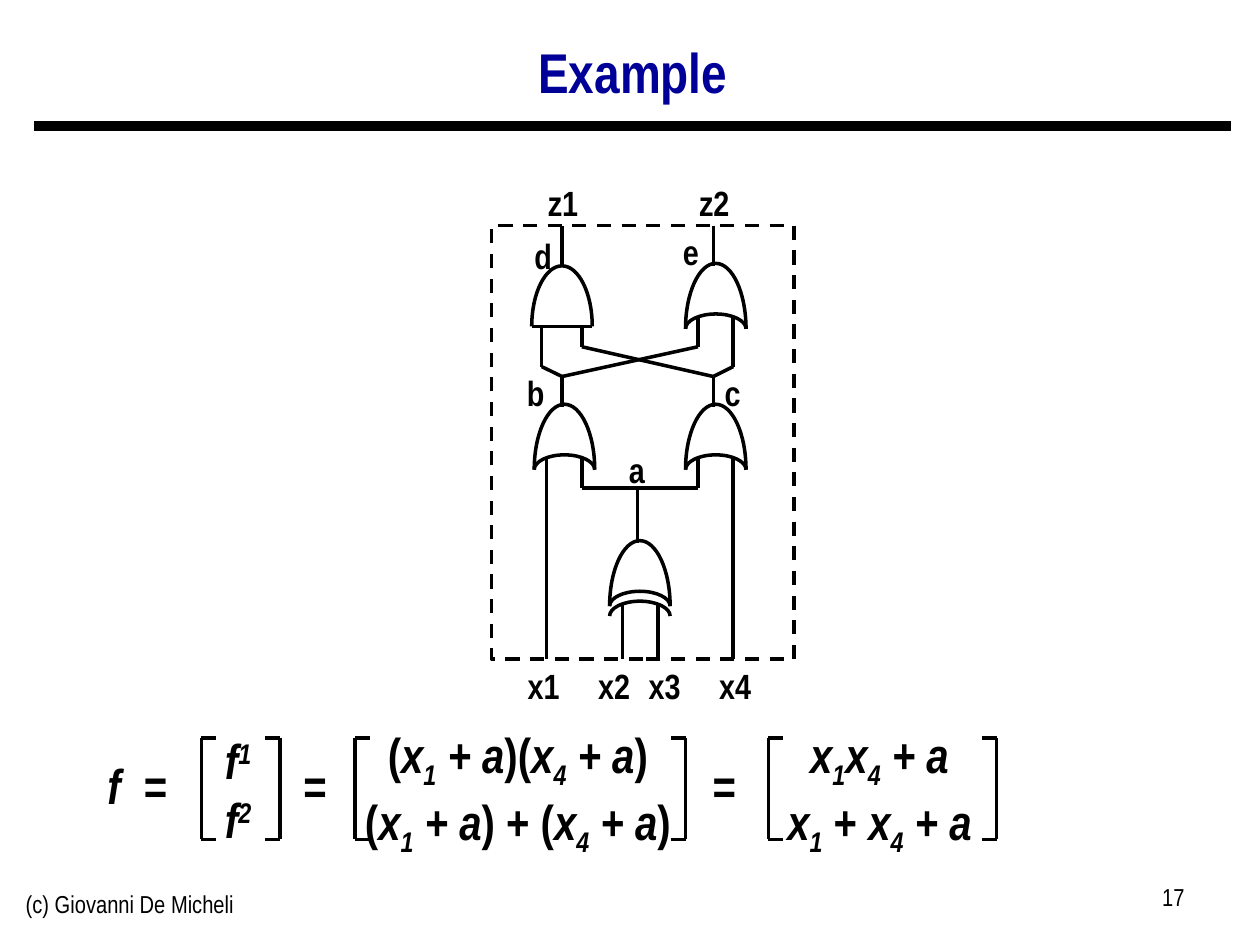
import pptx
import pptx.dml.color
import pptx.enum.dml
import pptx.enum.shapes
import pptx.enum.text
import pptx.oxml.ns
import pptx.util
from lxml import etree

Cm = pptx.util.Cm
Pt = pptx.util.Pt
qn = pptx.oxml.ns.qn
ALIGN = pptx.enum.text.PP_ALIGN
BLACK = pptx.dml.color.RGBColor(0x00, 0x00, 0x00)
NAVY = pptx.dml.color.RGBColor(0x00, 0x00, 0x99)
ROUND = 0.55  # Bézier handle length for a quarter ellipse


class Drawing:
    font = "Arial Narrow"
    color = BLACK
    line_width = 2

    def __init__(self, slide):
        self.s = slide

    def stroke(self, sp, width=None):
        sp.line.color.rgb = self.color
        sp.line.width = Pt(width or self.line_width)

    def outline(self, sp):
        sp.shadow.inherit = False
        sp.fill.background()
        self.stroke(sp)

    def line(self, x1, y1, x2, y2, width=None):
        sp = self.s.shapes.add_connector(
            pptx.enum.shapes.MSO_CONNECTOR.STRAIGHT, Cm(x1), Cm(y1), Cm(x2), Cm(y2))
        self.stroke(sp, width)
        etree.SubElement(sp._element.spPr, qn("a:effectLst"))

    def dashed_box(self, x, y, w, h):
        sp = self.s.shapes.add_shape(
            pptx.enum.shapes.MSO_SHAPE.RECTANGLE, Cm(x), Cm(y), Cm(w), Cm(h))
        self.outline(sp)
        sp.line.dash_style = pptx.enum.dml.MSO_LINE.DASH

    def dome(self, cx, top, h, w=1.22):
        """Upper half of an ellipse, left open at the bottom."""
        fb = self.s.shapes.build_freeform(Cm(cx - w / 2), Cm(top + h))
        fb.add_line_segments([(Cm(cx), Cm(top)), (Cm(cx + w / 2), Cm(top + h))],
                             close=False)
        sp = fb.convert_to_shape()
        self.outline(sp)
        shoulder = h * (1 - ROUND)
        handles = [[(0, shoulder), (w / 2 * (1 - ROUND), 0)],
                   [(w / 2 * (1 + ROUND), 0), (w, shoulder)]]
        for segment, pair in zip(list(sp._element.iter(qn("a:lnTo"))), handles):
            curve = etree.Element(qn("a:cubicBezTo"))
            for x, y in pair:
                etree.SubElement(curve, qn("a:pt"), x=str(Cm(x)), y=str(Cm(y)))
            curve.append(segment[0])
            segment.getparent().replace(segment, curve)

    def and_gate(self, cx, top):
        self.dome(cx, top, 1.22)
        self.line(cx - 0.61, top + 1.22, cx + 0.61, top + 1.22)

    def or_gate(self, cx, top, exclusive=False):
        self.dome(cx, top, 1.32)
        self.dome(cx, top + 1.02, 0.3)
        if exclusive:
            self.dome(cx, top + 1.22, 0.3)

    def brackets(self, left, right, top=14.88, bottom=16.92, tick=0.3):
        for x, end in ((left, left + tick), (right, right - tick)):
            self.line(x, top, x, bottom)
            self.line(x, top, end, top)
            self.line(x, bottom, end, bottom)

    def text(self, text, x, y, w, h, size=20, bold=True, italic=False, color=None,
             align=ALIGN.CENTER, wrap=False, middle=False, spacing=None):
        """Text is a string, or paragraphs of (run, style): i italic, _ sub, ^ super."""
        sp = self.s.shapes.add_textbox(Cm(x), Cm(y), Cm(w), Cm(h))
        tf = sp.text_frame
        tf.word_wrap = wrap
        if not wrap:
            tf.auto_size = pptx.enum.text.MSO_AUTO_SIZE.SHAPE_TO_FIT_TEXT
        if middle:
            tf.vertical_anchor = pptx.enum.text.MSO_ANCHOR.MIDDLE
        paragraphs = [[(text, "i" * italic)]] if isinstance(text, str) else text
        for i, runs in enumerate(paragraphs):
            p = tf.add_paragraph() if i else tf.paragraphs[0]
            p.alignment = align
            if spacing:
                p.line_spacing = spacing
            for content, style in runs:
                r = p.add_run()
                r.text = content
                r.font.name = self.font
                r.font.size = Pt(size)
                r.font.bold = bold
                r.font.italic = style != ""
                r.font.color.rgb = color or self.color
                if style in ("_", "^"):
                    r._r.get_or_add_rPr().set(
                        "baseline", "-25000" if style == "_" else "30000")


def draw_circuit(d):
    d.and_gate(11.33, 5.36)
    d.or_gate(14.43, 5.31)
    d.or_gate(12.9, 10.9, exclusive=True)
    d.or_gate(11.38, 8.15)
    d.or_gate(14.43, 8.15)
    d.dashed_box(9.91, 4.55, 6.1, 8.74)

    vertical_wires = [
        (11.02, 9.22, 13.28), (14.78, 9.22, 13.28),
        (12.55, 12.17, 13.28), (13.26, 12.17, 13.28),
        (11.33, 7.59, 8.2), (14.38, 7.59, 8.2),
        (10.92, 6.58, 7.39), (14.78, 6.38, 7.39),
        (11.73, 6.58, 6.99), (14.07, 6.38, 6.99),
        (11.73, 9.22, 9.84), (14.07, 9.22, 9.84),
        (12.85, 9.84, 10.95),
        (11.33, 4.55, 5.36), (14.38, 4.55, 5.36),
    ]
    for x, y1, y2 in vertical_wires:
        d.line(x, y1, x, y2)
    d.line(10.92, 7.39, 11.33, 7.59)
    d.line(14.38, 7.59, 14.78, 7.39)
    d.line(14.07, 6.99, 11.33, 7.59)
    d.line(11.73, 6.99, 14.38, 7.59)
    d.line(11.73, 9.84, 14.07, 9.84)

    labels = [
        ("a", 12.84, 8.92), ("b", 10.8, 7.37), ("c", 14.77, 7.37),
        ("d", 10.95, 4.6), ("e", 13.93, 4.52),
        ("x1", 10.96, 13.28), ("x2", 12.38, 13.28),
        ("x3", 13.4, 13.28), ("x4", 14.82, 13.28),
        ("z1", 11.35, 3.53), ("z2", 14.4, 3.53),
    ]
    for name, cx, top in labels:
        w = 0.56 + 0.32 * len(name)
        d.text(name, cx - w / 2, top, w, 1.09)


def draw_equation(d):
    d.text("f", 1.85, 15.11, 0.9, 1.45, size=28, italic=True)
    for cx in (3.12, 6.34, 14.59):
        d.text("=", cx - 0.5, 15.11, 1, 1.45, size=28, italic=True)

    x1 = [("x", "i"), ("1", "_")]
    x4 = [("x", "i"), ("4", "_")]
    plus_a = [(" + a", "i")]
    f_vector = [[("f", "i"), (n, "^")] for n in "12"]
    factored = [[("(", "")] + x1 + plus_a + [(joint, "")] + x4 + plus_a + [(")", "")]
                for joint in (")(", ") + (")]
    reduced = [x1 + x4 + plus_a, x1 + [(" + ", "")] + x4 + plus_a]
    vectors = [
        (f_vector, 4.06, 5.64, 4.8, 14.6, 1.09),
        (factored, 7.16, 13.82, 10.44, 14.48, 6.76),
        (reduced, 15.49, 20.09, 17.73, 14.48, 4.32),
    ]
    for rows, left, right, cx, top, w in vectors:
        d.brackets(left, right)
        d.text(rows, cx - w / 2, top, w, 2.62, size=28)


def main():
    prs = pptx.Presentation()
    prs.slide_width, prs.slide_height = Cm(25.4), Cm(19.05)
    d = Drawing(prs.slides.add_slide(prs.slide_layouts[6]))
    d.line(0.69, 2.54, 24.82, 2.54, width=6)
    d.text("(c) Giovanni De Micheli", 0.27, 17.79, 8.05, 1.32, size=14, bold=False,
           align=ALIGN.LEFT, wrap=True)
    d.text("17", 18.21, 17.66, 5.92, 1.32, size=14, bold=False,
           align=ALIGN.RIGHT, wrap=True)
    d.text("Example", 0.68, 0.56, 24.16, 1.9, size=32, color=NAVY,
           wrap=True, middle=True, spacing=0.9)
    draw_circuit(d)
    draw_equation(d)
    prs.save("out.pptx")


if __name__ == "__main__":
    main()
